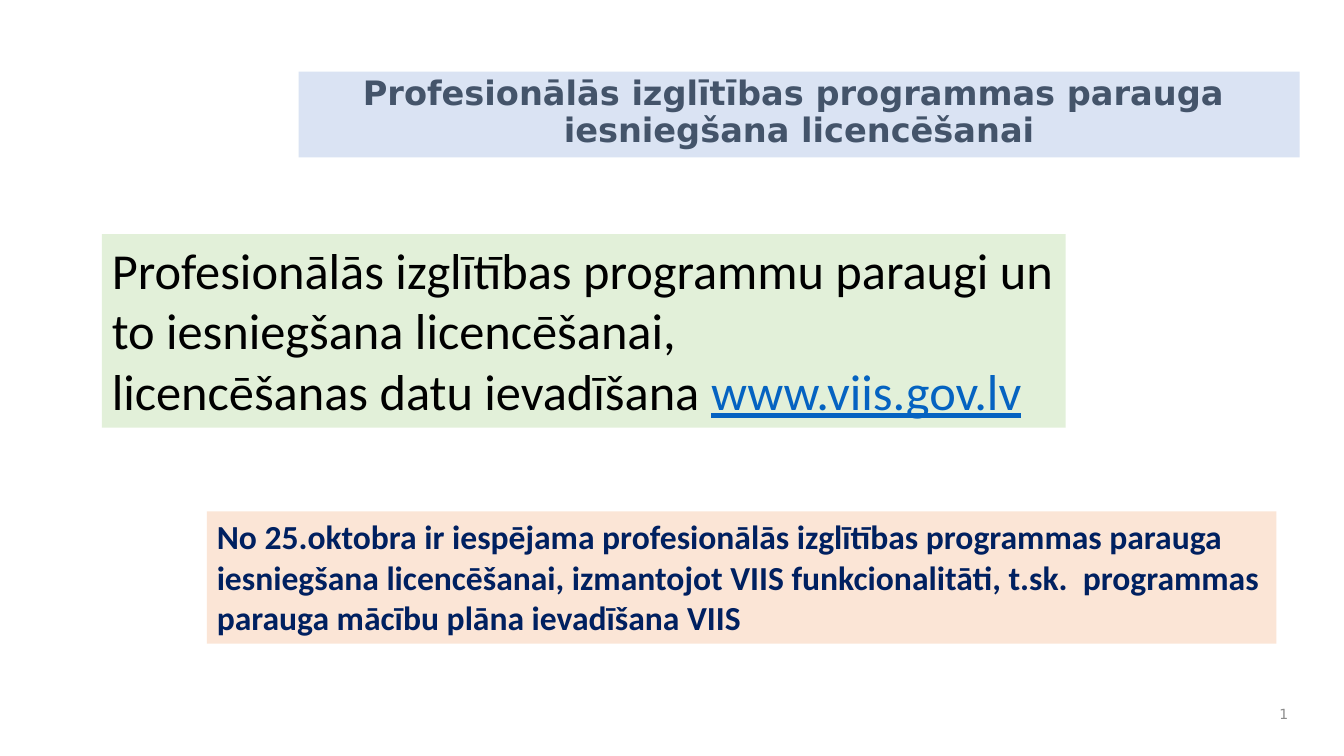
from lxml import etree
from pptx import Presentation
from pptx.dml.color import RGBColor
from pptx.enum import text
from pptx.oxml.ns import qn
from pptx.util import Pt

COLORS = {
    "title_fill": "DAE3F3",
    "title_text": "44546A",
    "topic_fill": "E2F0D9",
    "topic_text": "000000",
    "link": "0563C1",
    "notice_fill": "FBE5D6",
    "notice_text": "002060",
    "number": "8C8C8C",
}


def place(sp, left, top, width, height):
    sp.left, sp.top, sp.width, sp.height = Pt(left), Pt(top), Pt(width), Pt(height)


def fill_shape(sp, color):
    sp.fill.solid()
    sp.fill.fore_color.rgb = RGBColor.from_string(COLORS[color])


def set_frame(tf, anchor):
    tf.word_wrap = True
    tf.auto_size = text.MSO_AUTO_SIZE.NONE
    tf.vertical_anchor = anchor


def style_font(font, size, color, name, bold=False, underline=False):
    font.size = Pt(size)
    font.name = name
    font.bold = bold
    font.underline = underline
    font.color.rgb = RGBColor.from_string(COLORS[color])


def add_run(p, content, *style, **options):
    r = p.add_run()
    r.text = content
    style_font(r.font, *style, **options)


def add_title(s, content):
    sp = s.shapes.title
    place(sp, 213.3, 51.2, 715, 61.2)
    fill_shape(sp, "title_fill")
    set_frame(sp.text_frame, text.MSO_ANCHOR.TOP)
    p = sp.text_frame.paragraphs[0]
    p.alignment = text.PP_ALIGN.CENTER
    p.line_spacing = 0.9
    add_run(p, content, 24, "title_text", "DejaVu Sans", bold=True)


def add_panel(s, box, fill, paragraphs, size, bold=False):
    sp = s.shapes.add_textbox(0, 0, 0, 0)
    place(sp, *box)
    fill_shape(sp, fill)
    tf = sp.text_frame
    set_frame(tf, text.MSO_ANCHOR.TOP)
    for i, runs in enumerate(paragraphs):
        p = tf.add_paragraph() if i else tf.paragraphs[0]
        for content, color in runs:
            add_run(p, content, size, color, "Calibri", bold=bold, underline=color == "link")


def add_slide_number(s):
    sp = s.shapes.add_textbox(0, 0, 0, 0)
    place(sp, 895.7, 498.2, 31.7, 23.8)
    set_frame(sp.text_frame, text.MSO_ANCHOR.MIDDLE)
    p = sp.text_frame.paragraphs[0]
    p.alignment = text.PP_ALIGN.RIGHT
    add_run(p, "1", 10, "number", "DejaVu Sans")
    field = p.runs[0]._r
    field.tag
    fld = etree.SubElement(p._p, qn("a:fld"))
    fld.set("id", "{B6F15528-21DE-4FAA-801E-634DDDAF4B2B}")
    fld.set("type", "slidenum")
    for child in list(field):
        fld.append(child)
    p._p.remove(field)


def main():
    prs = Presentation()
    prs.slide_width, prs.slide_height = Pt(960), Pt(540)
    s = prs.slides.add_slide(prs.slide_layouts[5])
    add_slide_number(s)
    add_title(s, "Profesionālās izglītības programmas parauga  iesniegšana licencēšanai")
    add_panel(s, (72.8, 167.2, 688.4, 138.3), "topic_fill", [
        [("Profesionālās izglītības programmu paraugi un to iesniegšana licencēšanai,", "topic_text")],
        [("licencēšanas datu ievadīšana ", "topic_text"), ("www.viis.gov.lv", "link")],
    ], 36)
    add_panel(s, (147.8, 365.3, 764, 94.5), "notice_fill", [
        [("No 25.oktobra ir iespējama profesionālās izglītības programmas parauga "
          "iesniegšana licencēšanai, izmantojot VIIS funkcionalitāti, t.sk.  programmas "
          "parauga mācību plāna ievadīšana VIIS", "notice_text")],
    ], 24, bold=True)
    prs.save("out.pptx")


if __name__ == "__main__":
    main()
